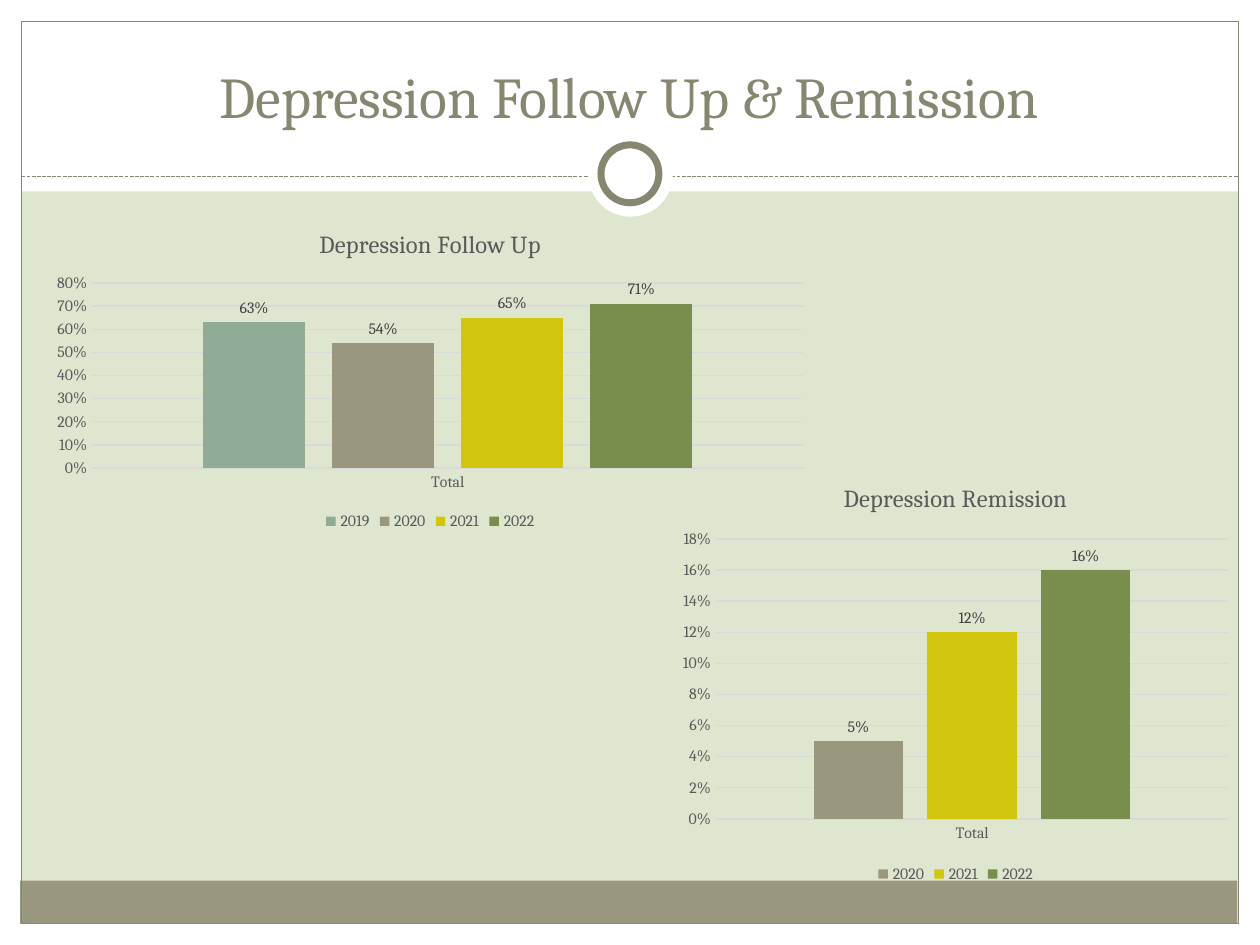
import pptx
import pptx.chart.data
import pptx.dml.color
import pptx.enum.chart
import pptx.enum.dml
import pptx.enum.shapes
import pptx.enum.text
import pptx.util
import lxml.etree

Inches = pptx.util.Inches
Pt = pptx.util.Pt
SHAPE = pptx.enum.shapes.MSO_SHAPE
CHART = pptx.enum.chart
WHITE, OLIVE, TAUPE = "FFFFFF", "878670", "99987F"
GREY, PALE, DARK = "595959", "D9D9D9", "404040"
HUES = {"2019": "90AC97", "2020": TAUPE, "2021": "CFC60D", "2022": "798E4C"}


def color(code):
    return pptx.dml.color.RGBColor.from_string(code)


class Deck:
    face = "Cambria"

    def __init__(self, back):
        self.file = pptx.Presentation()
        self.file.slide_width = Inches(10)
        self.file.slide_height = Inches(7.5)
        self.slide = self.file.slides.add_slide(self.file.slide_layouts[5])
        fill = self.slide.background.fill
        fill.solid()
        fill.fore_color.rgb = color(back)

    def style(self, font, size, code):
        font.name, font.size, font.bold = self.face, Pt(size), False
        font.color.rgb = color(code)

    def shape(self, kind, box, fill=None, line=None, width=0.75):
        item = self.slide.shapes.add_shape(kind, *map(Inches, box))
        item.shadow.inherit = False
        if fill:
            item.fill.solid()
            item.fill.fore_color.rgb = color(fill)
        else:
            item.fill.background()
        if line:
            item.line.color.rgb = color(line)
            item.line.width = Pt(width)
        else:
            item.line.fill.background()

    def rule(self, ends, code):
        item = self.slide.shapes.add_connector(
            pptx.enum.shapes.MSO_CONNECTOR.STRAIGHT, *map(Inches, ends))
        item.line.color.rgb = color(code)
        item.line.width = Pt(0.75)
        item.line.dash_style = pptx.enum.dml.MSO_LINE.SQUARE_DOT
        props = item.element.spPr
        lxml.etree.SubElement(props, pptx.oxml.ns.qn("a:effectLst"))

    def title(self, text, box):
        item = self.slide.shapes.title
        item.left, item.top, item.width, item.height = map(Inches, box)
        # Bring the title in front of the white frame
        item.element.getparent().append(item.element)
        frame = item.text_frame
        frame.word_wrap = True
        frame.vertical_anchor = pptx.enum.text.MSO_ANCHOR.BOTTOM
        para = frame.paragraphs[0]
        para.alignment = pptx.enum.text.PP_ALIGN.CENTER
        run = para.add_run()
        run.text = text
        self.style(run.font, 33, OLIVE)

    def chart(self, head, box, rates, top, step):
        data = pptx.chart.data.CategoryChartData(number_format="0%")
        data.categories = ["Total"]
        for year, rate in rates.items():
            data.add_series(year, [rate])
        chart = self.slide.shapes.add_chart(
            CHART.XL_CHART_TYPE.COLUMN_CLUSTERED, *map(Inches, box), data).chart
        self.style(chart.font, 10, "000000")

        # Chart title and legend
        chart.has_title = True
        run = chart.chart_title.text_frame.paragraphs[0].add_run()
        run.text = head
        self.style(run.font, 14, GREY)
        chart.chart_title.include_in_layout = False
        chart.has_legend = True
        chart.legend.position = CHART.XL_LEGEND_POSITION.BOTTOM
        chart.legend.include_in_layout = False
        self.style(chart.legend.font, 9, GREY)

        # Axes
        for axis in (chart.category_axis, chart.value_axis):
            axis.major_tick_mark = CHART.XL_TICK_MARK.NONE
            axis.minor_tick_mark = CHART.XL_TICK_MARK.NONE
            self.style(axis.tick_labels.font, 9, GREY)
        grid = chart.value_axis.major_gridlines.format.line
        for line in (chart.category_axis.format.line, grid):
            line.color.rgb = color(PALE)
            line.width = Pt(0.75)
        axis = chart.value_axis
        axis.format.line.fill.background()
        axis.minimum_scale, axis.maximum_scale = 0, top
        axis.major_unit = step
        axis.tick_labels.number_format = "0%"
        axis.tick_labels.number_format_is_linked = False

        # Columns and their labels
        plot = chart.plots[0]
        plot.gap_width, plot.overlap = 219, -27
        plot.vary_by_categories = False
        for bar in plot.series:
            bar.format.fill.solid()
            bar.format.fill.fore_color.rgb = color(HUES[bar.name])
            tags = bar.data_labels
            tags.show_value = True
            tags.position = CHART.XL_LABEL_POSITION.OUTSIDE_END
            tags.number_format = "0%"
            tags.number_format_is_linked = False
            self.style(tags.font, 9, DARK)


def main():
    deck = Deck("DFE6D0")

    # White margins, footer band and outline
    for box in ((0, 7.33, 10, 0.17), (0, 0, 10, 1.52),
                (0, 0, 0.17, 7.5), (9.83, 0, 0.17, 7.5)):
        deck.shape(SHAPE.RECTANGLE, box, WHITE)
    deck.shape(SHAPE.RECTANGLE, (0.16, 6.99, 9.66, 0.34), TAUPE)
    deck.shape(SHAPE.RECTANGLE, (0.17, 0.17, 9.66, 7.16), line=OLIVE)

    # Dashed rule with the ring
    deck.rule((0.17, 1.4, 9.83, 1.4), OLIVE)
    deck.shape(SHAPE.OVAL, (4.67, 1.05, 0.67, 0.67), WHITE)
    deck.shape(SHAPE.OVAL, (4.77, 1.15, 0.46, 0.46), WHITE, OLIVE, 4)

    # Title and charts
    deck.title("Depression Follow Up & Remission", (0.33, 0.25, 9.33, 0.83))
    deck.chart("Depression Follow Up", (0.33, 1.67, 6.17, 2.58),
               {"2019": 0.63, "2020": 0.54, "2021": 0.65, "2022": 0.71},
               0.8, 0.1)
    deck.chart("Depression Remission", (5.33, 3.67, 4.51, 3.38),
               {"2020": 0.05, "2021": 0.12, "2022": 0.16}, 0.18, 0.02)

    deck.file.save("out.pptx")


if __name__ == "__main__":
    main()
